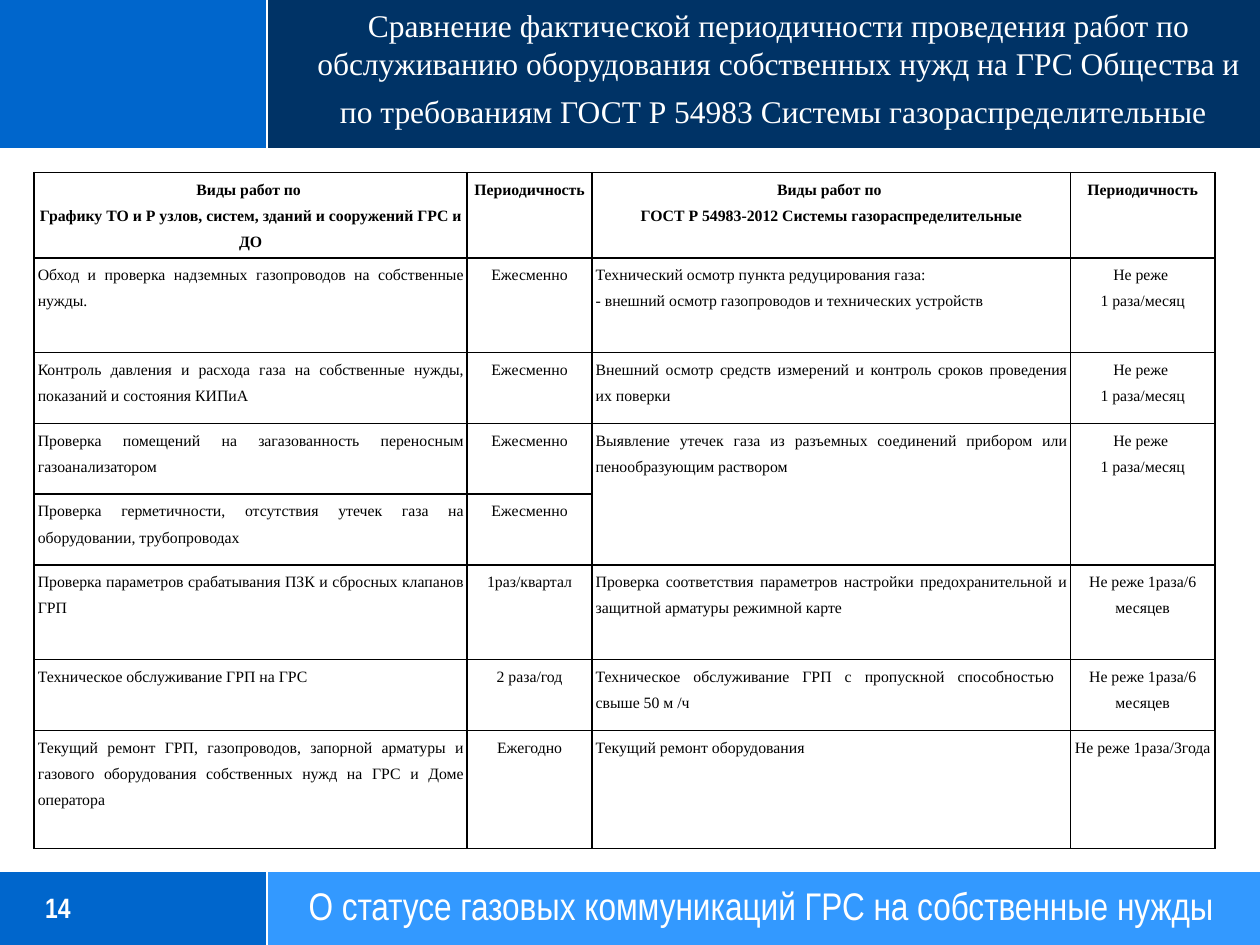
from dataclasses import dataclass

from lxml.etree import SubElement
from pptx import Presentation
from pptx.dml.color import RGBColor
from pptx.enum.shapes import MSO_CONNECTOR, MSO_SHAPE
from pptx.enum.text import MSO_ANCHOR, MSO_AUTO_SIZE, PP_ALIGN
from pptx.oxml.ns import qn
from pptx.util import Pt


@dataclass(frozen=True)
class Theme:
    blue: str = "0066CC"
    navy: str = "003366"
    sky: str = "3399FF"
    white: str = "FFFFFF"
    black: str = "000000"
    serif: str = "Times New Roman"
    narrow: str = "Arial Narrow"
    title_size: int = 18
    title_end_size: int = 24
    footer_size: int = 22
    number_size: int = 16
    table_size: int = 9
    rule_width: float = 1.25
    border_width: float = 1


WIDTH, HEIGHT = 720, 540
SPLIT = 152.64
HEADER_HEIGHT = 84.96
FOOTER_TOP = 497.52
COLUMN_WIDTHS = (247.5, 71.3, 273.5, 82.5)
LINE_HEIGHT = 13.5
ROW_LINES = (3, 4, 3, 3, 3, 4, 3, 5)
TITLE = (
    "Сравнение фактической периодичности проведения работ по обслуживанию "
    "оборудования собственных нужд на ГРС Общества и по требованиям "
    "ГОСТ Р 54983 Системы газораспределительные"
)
FOOTER = "О статусе газовых коммуникаций ГРС на собственные нужды"
MONTHLY = "Не реже \v1 раза/месяц"
HALF_YEARLY = "Не реже 1раза/6 месяцев"
ROWS = (
    ("Виды работ по \nГрафику ТО и Р узлов, систем, зданий и сооружений ГРС и ДО",
     "Периодичность",
     "Виды работ по \vГОСТ Р 54983-2012 Системы газораспределительные",
     "Периодичность"),
    ("Обход и проверка надземных газопроводов на собственные нужды.",
     "Ежесменно",
     "Технический осмотр пункта редуцирования газа:\n"
     "- внешний осмотр газопроводов и технических устройств",
     MONTHLY),
    ("Контроль давления и расхода газа на собственные нужды, показаний и состояния КИПиА",
     "Ежесменно",
     "Внешний осмотр средств измерений и контроль сроков проведения их поверки",
     MONTHLY),
    ("Проверка помещений на загазованность переносным газоанализатором",
     "Ежесменно",
     "Выявление утечек газа из разъемных соединений прибором или пенообразующим раствором",
     MONTHLY),
    ("Проверка герметичности, отсутствия утечек газа на оборудовании, трубопроводах",
     "Ежесменно", None, None),
    ("Проверка параметров срабатывания ПЗК и сбросных клапанов ГРП",
     "1раз/квартал",
     "Проверка соответствия параметров настройки предохранительной и защитной арматуры "
     "режимной карте",
     HALF_YEARLY),
    ("Техническое обслуживание ГРП на ГРС",
     "2 раза/год",
     "Техническое обслуживание ГРП с пропускной способностью \vсвыше 50 м /ч",
     HALF_YEARLY),
    ("Текущий ремонт ГРП, газопроводов, запорной арматуры и газового оборудования "
     "собственных нужд на ГРС и Доме оператора",
     "Ежегодно", "Текущий ремонт оборудования", "Не реже 1раза/3года"),
)


class SlideBuilder:
    """Draws the elements of one slide in a shared theme."""

    def __init__(self, page, theme):
        self.page = page
        self.theme = theme

    def style(self, paragraph, font, size, color, bold=False):
        for span in paragraph.runs:
            span.font.name = font
            span.font.size = Pt(size)
            span.font.bold = bold
            span.font.color.rgb = RGBColor.from_string(color)
        for line_break in paragraph._p.findall(qn("a:br")):
            SubElement(line_break, qn("a:rPr"), sz=str(size * 100))

    def band(self, left, top, width, height, color):
        shape = self.page.shapes.add_shape(
            MSO_SHAPE.RECTANGLE, Pt(left), Pt(top), Pt(width), Pt(height))
        shape.shadow.inherit = False
        shape.fill.solid()
        shape.fill.fore_color.rgb = RGBColor.from_string(color)
        shape.line.fill.background()

    def rule(self, left, top, right, bottom):
        line = self.page.shapes.add_connector(
            MSO_CONNECTOR.STRAIGHT, Pt(left), Pt(top), Pt(right), Pt(bottom))
        line.line.color.rgb = RGBColor.from_string(self.theme.white)
        line.line.width = Pt(self.theme.rule_width)
        SubElement(line.element.spPr, qn("a:effectLst"))

    def title(self, text, left, top, width, height):
        theme = self.theme
        box = self.page.shapes.title
        box.element.getparent().append(box.element)
        box.left, box.top, box.width, box.height = Pt(left), Pt(top), Pt(width), Pt(height)
        frame = box.text_frame
        frame.text = text
        frame.word_wrap = True
        frame.auto_size = MSO_AUTO_SIZE.NONE
        frame.vertical_anchor = MSO_ANCHOR.MIDDLE
        frame.margin_left = frame.margin_right = frame.margin_top = frame.margin_bottom = 0
        para = frame.paragraphs[0]
        para.alignment = PP_ALIGN.CENTER
        ending = para.add_run()
        ending.text = " "
        self.style(para, theme.serif, theme.title_size, theme.white)
        ending.font.size = Pt(theme.title_end_size)

    def label(self, text, left, top, width, height, size, bold=False):
        box = self.page.shapes.add_textbox(Pt(left), Pt(top), Pt(width), Pt(height))
        box.text_frame.word_wrap = True
        box.text_frame.text = text
        self.style(box.text_frame.paragraphs[0], self.theme.narrow, size, self.theme.white, bold)

    def cell(self, cell, text, alignment, bold):
        theme = self.theme
        cell.margin_left = cell.margin_right = Pt(2.16)
        cell.margin_top = cell.margin_bottom = 0
        properties = cell._tc.get_or_add_tcPr()
        for side in ("lnL", "lnR", "lnT", "lnB"):
            border = SubElement(properties, qn(f"a:{side}"), w=str(Pt(theme.border_width)))
            SubElement(SubElement(border, qn("a:solidFill")), qn("a:srgbClr"), val=theme.black)
        cell.fill.background()
        if text is None:
            return
        cell.text_frame.text = text
        for para in cell.text_frame.paragraphs:
            para.alignment = alignment
            para.line_spacing = 1.5
            self.style(para, theme.serif, theme.table_size, theme.black, bold)

    def table(self, left, top):
        table = self.page.shapes.add_table(
            len(ROWS), len(COLUMN_WIDTHS), Pt(left), Pt(top),
            Pt(sum(COLUMN_WIDTHS)), Pt(sum(ROW_LINES) * LINE_HEIGHT)).table
        table.first_row = table.horz_banding = False
        for column, width in zip(table.columns, COLUMN_WIDTHS):
            column.width = Pt(width)
        for index, (row, lines, texts) in enumerate(zip(table.rows, ROW_LINES, ROWS)):
            row.height = Pt(lines * LINE_HEIGHT)
            for column, text in enumerate(texts):
                centred = index == 0 or column % 2
                alignment = PP_ALIGN.CENTER if centred else PP_ALIGN.JUSTIFY
                self.cell(table.cell(index, column), text, alignment, index == 0)
                if text is None:
                    table.cell(index - 1, column).merge(table.cell(index, column))


def main():
    deck = Presentation()
    deck.slide_width, deck.slide_height = Pt(WIDTH), Pt(HEIGHT)
    theme = Theme()
    builder = SlideBuilder(deck.slides.add_slide(deck.slide_layouts[5]), theme)
    for top, bottom, color in ((FOOTER_TOP, HEIGHT, theme.sky), (0, HEADER_HEIGHT, theme.navy)):
        builder.band(0, top, SPLIT, bottom - top, theme.blue)
        builder.band(SPLIT, top, WIDTH - SPLIT, bottom - top, color)
        builder.rule(SPLIT, top, SPLIT, bottom)
    for edge in (FOOTER_TOP, HEADER_HEIGHT):
        builder.rule(0, edge, WIDTH, edge)
    builder.label("14", 18.72, 505.44, 120, 26, theme.number_size, bold=True)
    builder.title(TITLE, 170, 0, 550, 79.2)
    builder.label(FOOTER, 169.2, 500.4, 550.8, 33.84, theme.footer_size)
    builder.table(19.44, 98.64)
    deck.save("out.pptx")


if __name__ == "__main__":
    main()
